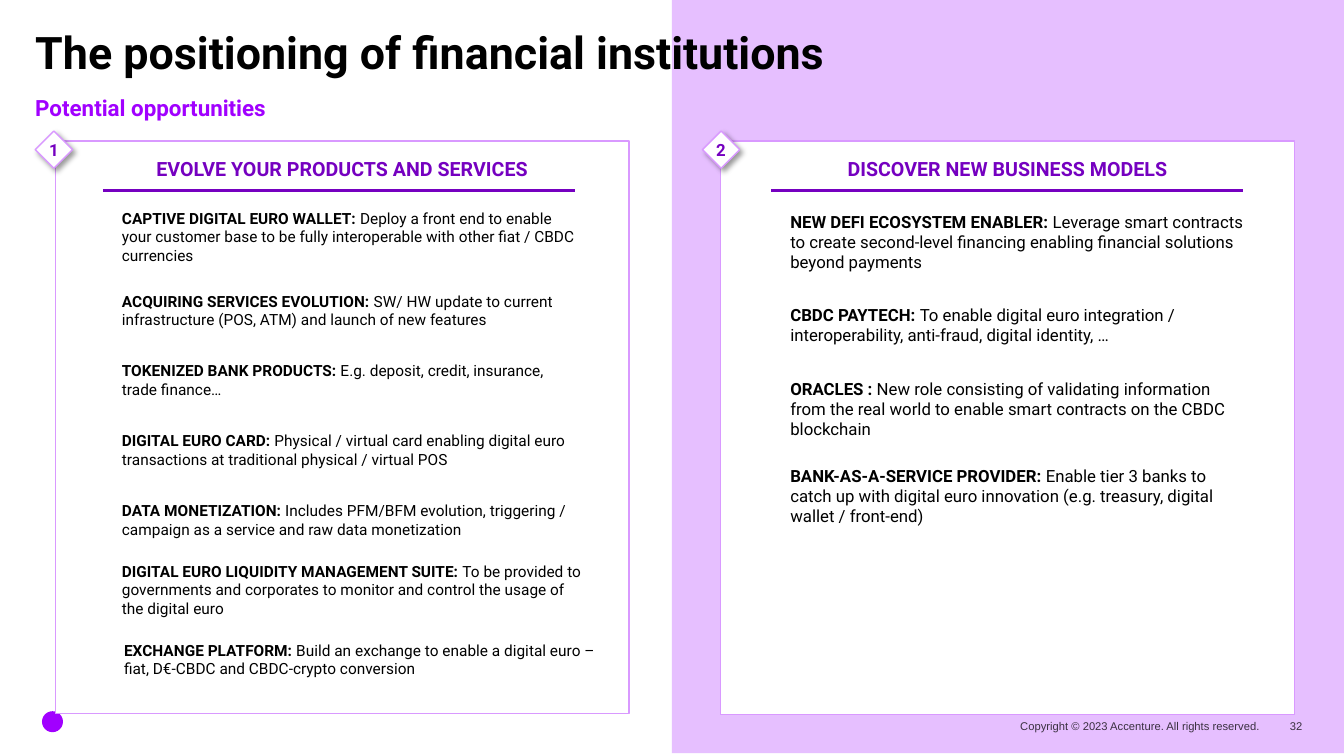
"""Build the slide on the positioning of financial institutions."""
from dataclasses import dataclass

from lxml.etree import SubElement
from pptx import Presentation
from pptx.dml.color import RGBColor
from pptx.enum.shapes import MSO_CONNECTOR, MSO_SHAPE
from pptx.enum.text import MSO_ANCHOR, PP_ALIGN
from pptx.oxml.ns import qn
from pptx.shapes.autoshape import Shape
from pptx.slide import Slide
from pptx.util import Pt


@dataclass(frozen=True)
class Theme:
    """Colours, fonts and type sizes."""
    black: str = "000000"
    white: str = "FFFFFF"
    lilac: str = "E6BFFF"
    edge: str = "D999FF"
    deep: str = "7500C0"
    vivid: str = "A100FF"
    faint: str = "3A3040"
    main: str = "Roboto"
    small: str = "Arial"
    title: float = 32
    lead: float = 16
    head: float = 14
    badge: float = 12
    foot: float = 8


@dataclass(frozen=True)
class Box:
    """A frame in points."""
    left: float
    top: float
    width: float
    height: float


@dataclass(frozen=True)
class Run:
    """A piece of text in one style."""
    text: str
    size: float
    color: str
    bold: bool = True
    face: str = "Roboto"


@dataclass(frozen=True)
class Card:
    """A bold term and what it means."""
    term: str
    text: str
    height: float = 39.9
    width: float = 330.5
    shift: float = 0


@dataclass(frozen=True)
class Panel:
    """A framed list of cards under a numbered heading."""
    number: str
    head: str
    frame: Box
    badge: float
    rule: float
    inner: float
    size: float
    cards: tuple[Card, ...]


THEME = Theme()
GAP = 10
START = 146.2
PANELS = (
    Panel("1", "EVOLVE YOUR PRODUCTS AND SERVICES", Box(39.6, 100.8, 409.7, 409), 25.2, 73.5, 80.6, 11, (
        Card("CAPTIVE DIGITAL EURO WALLET:", "Deploy a front end to enable your customer base to be fully "
             "interoperable with other fiat / CBDC currencies", 45.4, 337),
        Card("ACQUIRING SERVICES EVOLUTION:",
             "SW/ HW update to current infrastructure (POS, ATM) and launch of new features"),
        Card("TOKENIZED BANK PRODUCTS:", "E.g. deposit, credit, insurance, trade finance…"),
        Card("DIGITAL EURO CARD:", "Physical / virtual card enabling digital euro transactions at "
             "traditional physical / virtual POS"),
        Card("DATA MONETIZATION:", "Includes PFM/BFM evolution, triggering / campaign as a service "
             "and raw data monetization"),
        Card("DIGITAL EURO LIQUIDITY MANAGEMENT SUITE:", "To be provided to governments and corporates "
             "to monitor and control the usage of the digital euro", width=337),
        Card("EXCHANGE PLATFORM:", "Build an exchange to enable a digital euro – fiat, D€-CBDC and "
             "CBDC-crypto conversion", width=350, shift=1.5),
    )),
    Panel("2", "DISCOVER NEW BUSINESS MODELS", Box(514.8, 100.8, 409.7, 409.5), 501.8, 550.8, 558, 12, (
        Card("NEW DEFI ECOSYSTEM ENABLER:", "Leverage smart contracts to create second-level financing "
             "enabling financial solutions beyond payments", 53.3),
        Card("CBDC PAYTECH:", "To enable digital euro integration / interoperability, anti-fraud, "
             "digital identity, …", 44.6),
        Card("ORACLES :", "New role consisting of validating information from the real world to enable "
             "smart contracts on the CBDC blockchain", 56.2),
        Card("BANK-AS-A-SERVICE PROVIDER:", "Enable tier 3 banks to catch up with digital euro "
             "innovation (e.g. treasury, digital wallet / front-end)", 48.2),
    )),
)


def place(box: Box) -> tuple[Pt, Pt, Pt, Pt]:
    """Turn a frame into lengths."""
    return Pt(box.left), Pt(box.top), Pt(box.width), Pt(box.height)


def draw(slide: Slide, kind: MSO_SHAPE, box: Box, fill: str, edge: str | None = None) -> Shape:
    """Add a flat shape with an optional outline."""
    shape = slide.shapes.add_shape(kind, *place(box))
    shape.shadow.inherit = False
    shape.fill.solid()
    shape.fill.fore_color.rgb = RGBColor.from_string(fill)
    if edge:
        shape.line.color.rgb = RGBColor.from_string(edge)
        shape.line.width = Pt(1)
    else:
        shape.line.fill.background()
    return shape


def write(shape: Shape, runs: tuple[Run, ...], align: PP_ALIGN = PP_ALIGN.LEFT,
          anchor: MSO_ANCHOR = MSO_ANCHOR.MIDDLE, left: float = 0, top: float = 0) -> None:
    """Fill a shape with one paragraph of runs."""
    frame = shape.text_frame
    form = {"word_wrap": True, "vertical_anchor": anchor, "margin_left": Pt(left),
            "margin_top": Pt(top), "margin_right": Pt(0), "margin_bottom": Pt(0)}
    for name, value in form.items():
        setattr(frame, name, value)
    para = frame.paragraphs[0]
    para.alignment = align
    for run in runs:
        part = para.add_run()
        part.text = run.text
        for name, value in {"size": Pt(run.size), "bold": run.bold, "name": run.face}.items():
            setattr(part.font, name, value)
        part.font.color.rgb = RGBColor.from_string(run.color)


def label(slide: Slide, box: Box, run: Run, align: PP_ALIGN = PP_ALIGN.LEFT) -> None:
    """Add a text box with one run."""
    write(slide.shapes.add_textbox(*place(box)), (run,), align)


def shade(shape: Shape) -> None:
    """Give a shape a soft drop shadow."""
    glow = shape._element.spPr.find(qn("a:effectLst"))
    form = {"blurRad": Pt(4), "dist": Pt(3), "dir": 45 * 60000, "algn": "tl", "rotWithShape": 0}
    drop = SubElement(glow, qn("a:outerShdw"), {name: str(value) for name, value in form.items()})
    tint = SubElement(drop, qn("a:srgbClr"), val=THEME.black)
    SubElement(tint, qn("a:alpha"), val="40000")


def rule(slide: Slide, left: float, top: float, width: float) -> None:
    """Draw the line below a heading."""
    line = slide.shapes.add_connector(MSO_CONNECTOR.STRAIGHT, Pt(left), Pt(top), Pt(left + width), Pt(top))
    line.line.color.rgb = RGBColor.from_string(THEME.deep)
    line.line.width = Pt(2.25)
    SubElement(line._element.spPr, qn("a:effectLst"))


def build(slide: Slide, panel: Panel) -> None:
    """Draw a panel with its heading, cards and badge."""
    frame = draw(slide, MSO_SHAPE.RECTANGLE, panel.frame, THEME.white, THEME.edge)
    write(frame, (Run(panel.head, THEME.head, THEME.deep),), PP_ALIGN.CENTER, MSO_ANCHOR.TOP, top=11.5)
    rule(slide, panel.rule, 136, 337)
    top = START
    for card in panel.cards:
        box = Box(panel.inner + card.shift, top, card.width, card.height)
        runs = (Run(card.term + " ", panel.size, THEME.black),
                Run(card.text, panel.size, THEME.black, False))
        write(draw(slide, MSO_SHAPE.RECTANGLE, box, THEME.white), runs, left=6.5)
        top += card.height + GAP
    badge = draw(slide, MSO_SHAPE.DIAMOND, Box(panel.badge, 93.6, 26.6, 26.6), THEME.white, THEME.edge)
    shade(badge)
    write(badge, (Run(panel.number, THEME.badge, THEME.deep),), PP_ALIGN.CENTER)


def main() -> None:
    """Make the deck and save it."""
    deck = Presentation()
    deck.slide_width, deck.slide_height = Pt(960), Pt(540)
    slide = deck.slides.add_slide(deck.slide_layouts[6])
    draw(slide, MSO_SHAPE.OVAL, Box(30, 508, 15, 15), THEME.vivid)
    draw(slide, MSO_SHAPE.RECTANGLE, Box(480, 0, 480, 538), THEME.lilac)
    label(slide, Box(25.2, 16.6, 920, 40), Run("The positioning of financial institutions", THEME.title, THEME.black))
    label(slide, Box(25.2, 67, 440, 19), Run("Potential opportunities", THEME.lead, THEME.vivid))
    for panel in PANELS:
        build(slide, panel)
    for box, text in ((Box(655.2, 510.5, 244.8, 16), "Copyright © 2023 Accenture. All rights reserved."),
                      (Box(900, 510.5, 30.2, 16), "32")):
        label(slide, box, Run(text, THEME.foot, THEME.faint, False, THEME.small), PP_ALIGN.RIGHT)
    deck.save("out.pptx")


if __name__ == "__main__":
    main()
